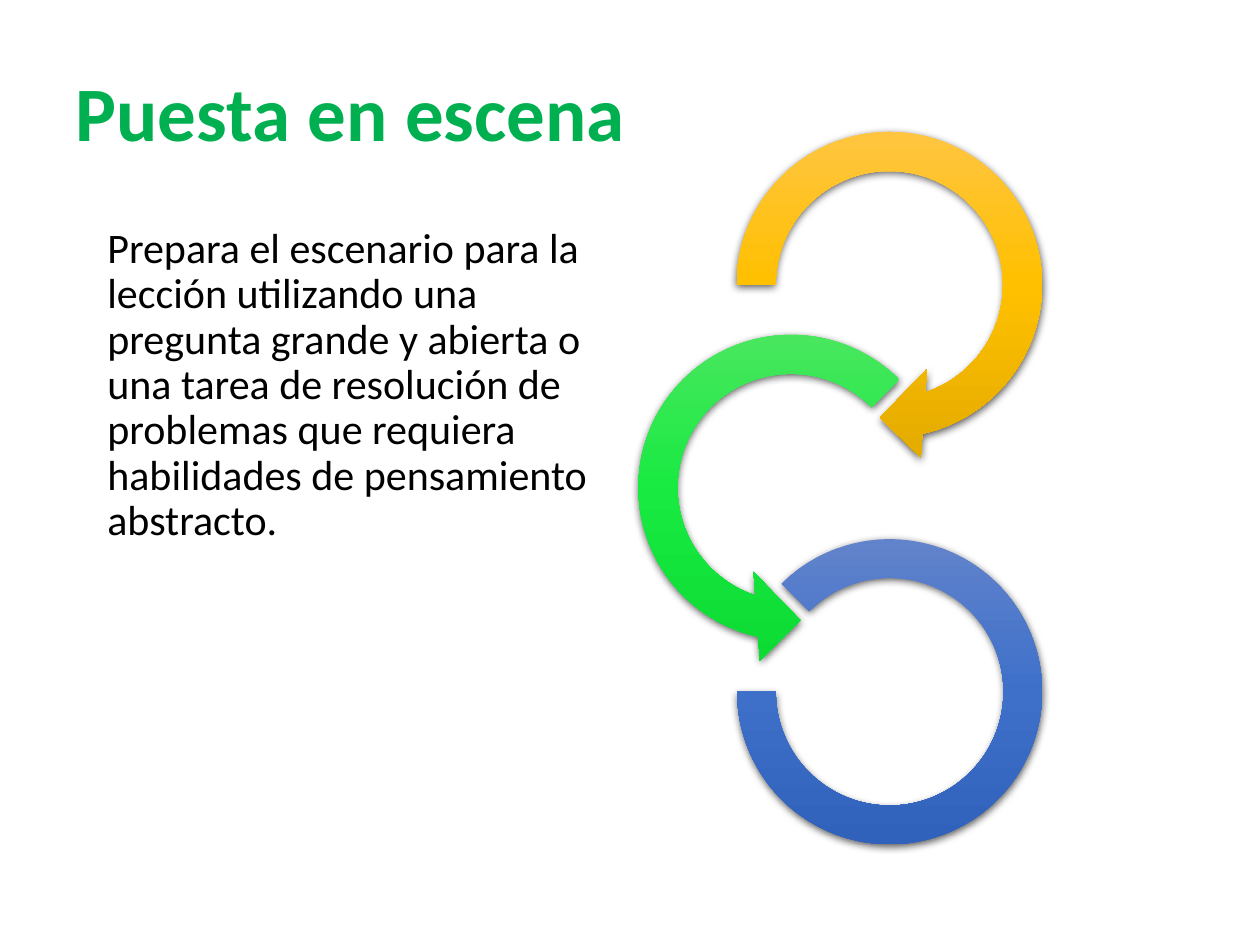
"""Build the "Puesta en escena" slide with its chain of circular arrows."""
from copy import deepcopy

from lxml import etree
from pptx import Presentation
from pptx.dml.color import RGBColor
from pptx.enum.shapes import MSO_SHAPE
from pptx.enum.text import MSO_ANCHOR, MSO_AUTO_SIZE, PP_ALIGN
from pptx.oxml.ns import qn
from pptx.util import Cm, Pt

FONT = "Calibri"
LEFT = PP_ALIGN.LEFT
TOP, MIDDLE = MSO_ANCHOR.TOP, MSO_ANCHOR.MIDDLE
NO_AUTOFIT = MSO_AUTO_SIZE.NONE
RIGHT_ARROW = MSO_SHAPE.CIRCULAR_ARROW
LEFT_ARROW = MSO_SHAPE.LEFT_CIRCULAR_ARROW
ARC = MSO_SHAPE.BLOCK_ARC

BODY = ("Prepara el escenario para la lección utilizando una pregunta grande y "
        "abierta o una tarea de resolución de problemas que requiera "
        "habilidades de pensamiento abstracto.")
LINKS = [
    (RIGHT_ARROW, 14.35, 2.16, 7.16, (0.11, 11.42, 45, 108, 0.125),
     ("FFC64B", "FFC000", "E3AB00")),
    (LEFT_ARROW, 12.37, 6.25, 7.16, (0.11, 11.42, 63, 189, 0.125),
     ("51E663", "19EA42", "0CDB34")),
    (ARC, 14.86, 10.87, 6.15, (135, 108, 0.127),
     ("6183CB", "3E70CA", "3062BB")),
]


def rgb(value):
    """Return the colour for a hex string."""
    return RGBColor.from_string(value)


def fill_placeholder(sp, box, text, size, color, anchor, bold=False):
    """Move a placeholder and set its single paragraph."""
    sp.left, sp.top, sp.width, sp.height = (Cm(v) for v in box)
    tf = sp.text_frame
    tf.text = text
    tf.word_wrap = True
    tf.auto_size = NO_AUTOFIT
    tf.vertical_anchor = anchor
    p = tf.paragraphs[0]
    p.alignment = LEFT
    p.line_spacing = 0.9
    p.space_before = Pt(0)
    font = p.runs[0].font
    font.name, font.size, font.bold = FONT, Pt(size), bold
    font.color.rgb = rgb(color)
    return p


def remove_bullet(p, margin):
    """Replace the bullet by a plain left margin."""
    pPr = p._p.get_or_add_pPr()
    pPr.set("marL", str(Cm(margin)))
    pPr.set("indent", "0")
    etree.SubElement(pPr, qn("a:buNone"))


def set_gradient(sp, colors):
    """Fill a shape from top to bottom with evenly spaced colours."""
    sp.fill.gradient()
    sp.fill.gradient_angle = 270
    stops = sp._element.spPr.find(".//" + qn("a:gsLst"))
    for _ in colors[2:]:
        stops.append(deepcopy(stops[0]))
    for i, (stop, color) in enumerate(zip(sp.fill.gradient_stops, colors)):
        stop.color.rgb = rgb(color)
        stop.position = i / (len(colors) - 1)


def add_shadow(sp):
    """Give a shape a soft shadow below it."""
    sp.shadow.inherit = False
    effects = sp._element.spPr.find(qn("a:effectLst"))
    shadow = etree.SubElement(
        effects, qn("a:outerShdw"), blurRad=str(Pt(4.5)), dist=str(Pt(1.5)),
        dir="5400000", algn="ctr", rotWithShape="0")
    color = etree.SubElement(shadow, qn("a:srgbClr"), val="000000")
    etree.SubElement(color, qn("a:alpha"), val="63000")


def add_link(s, kind, left, top, size, adjustments, colors):
    """Add one circular link of the chain."""
    sp = s.shapes.add_shape(kind, Cm(left), Cm(top), Cm(size), Cm(size))
    for i, value in enumerate(adjustments):
        sp.adjustments[i] = value
    set_gradient(sp, colors)
    sp.line.fill.background()
    add_shadow(sp)


def main():
    """Build and save the slide."""
    prs = Presentation()
    prs.slide_width, prs.slide_height = Cm(25.4), Cm(19.05)
    s = prs.slides.add_slide(prs.slide_layouts[1])
    fill_placeholder(s.shapes.title, (1.27, 0.76, 22.86, 3.18),
                     "Puesta en escena", 44, "00B050", MIDDLE, bold=True)
    p = fill_placeholder(s.placeholders[1], (1.27, 4.45, 11.23, 12.57),
                         BODY, 24, "000000", TOP)
    remove_bullet(p, 0.64)
    for link in LINKS:
        add_link(s, *link)
    prs.save("out.pptx")


if __name__ == "__main__":
    main()
